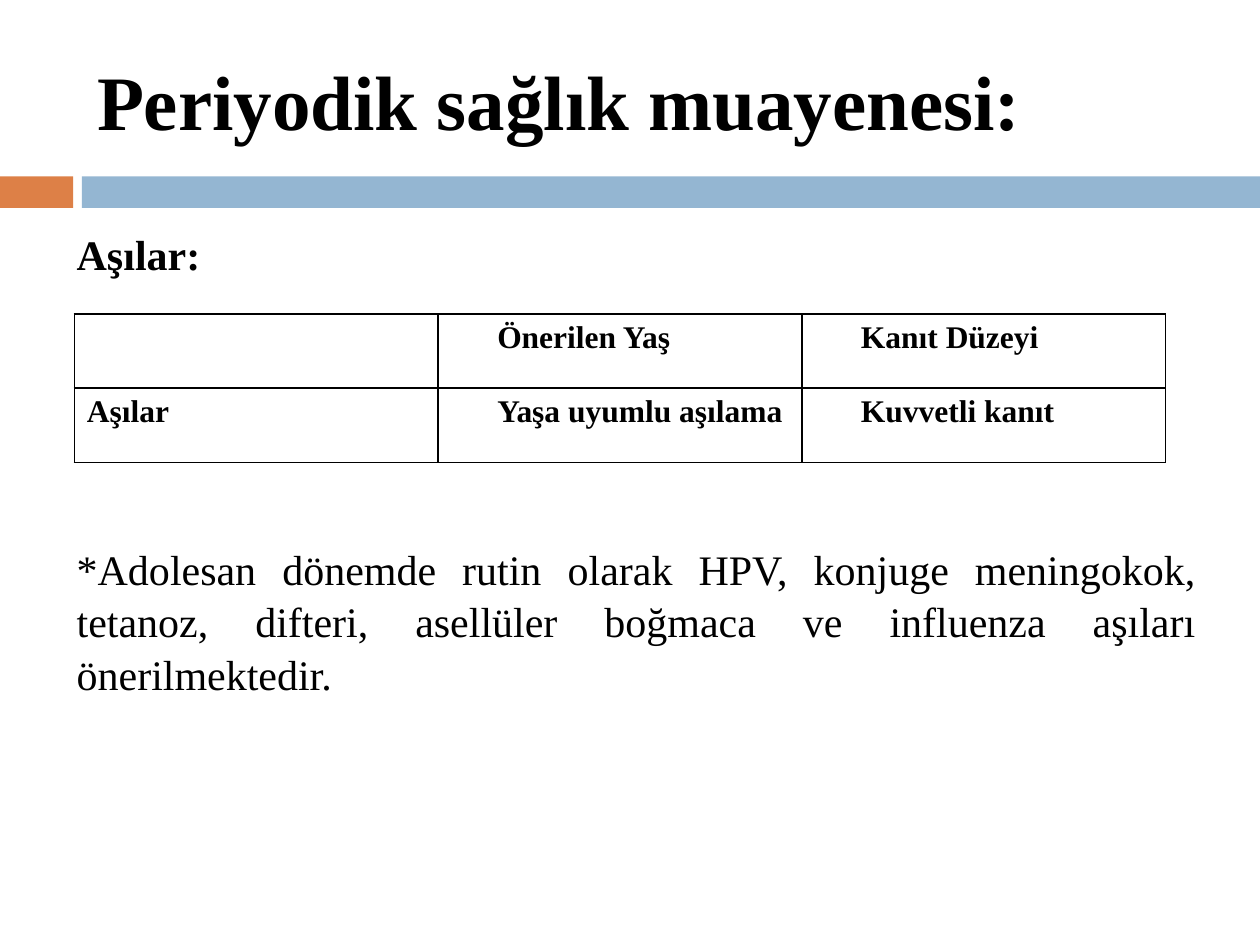
from lxml import etree
from pptx import Presentation
from pptx.dml.color import RGBColor
from pptx.enum.shapes import MSO_SHAPE
from pptx.enum.text import MSO_ANCHOR, PP_ALIGN
from pptx.oxml.ns import qn
from pptx.util import Inches, Pt


def color(hex_code):
    return RGBColor.from_string(hex_code)


def style(para, size, bold, align=PP_ALIGN.LEFT):
    para.alignment = align
    para.font.name = "Times New Roman"
    para.font.size = Pt(size)
    para.font.bold = bold
    para.font.color.rgb = color("000000")


deck = Presentation()
deck.slide_width, deck.slide_height = Inches(10), Inches(7.5)
page = deck.slides.add_slide(deck.slide_layouts[5])

# Divider bars
for left, width, fill in [(0, 0.58, "DD8047"), (0.65, 9.35, "94B6D2")]:
    bar = page.shapes.add_shape(MSO_SHAPE.RECTANGLE, Inches(left), Inches(1.4),
                                Inches(width), Inches(0.25))
    bar.shadow.inherit = False
    bar.fill.solid()
    bar.fill.fore_color.rgb = color(fill)
    bar.line.fill.background()

# Title
title = page.shapes.title
title.left, title.top = Inches(0.67), Inches(0.25)
title.width, title.height = Inches(8.92), Inches(1.08)
title.text_frame.text = "Periyodik sağlık muayenesi:"
title.text_frame.vertical_anchor = MSO_ANCHOR.MIDDLE
style(title.text_frame.paragraphs[0], 44, True)

# Body: heading and note, with room between them for the table
body = page.shapes.add_textbox(Inches(0.51), Inches(1.75), Inches(9.08), Inches(5.31))
frame = body.text_frame
frame.word_wrap = True
heading = frame.paragraphs[0]
heading.text = "Aşılar:"
style(heading, 24, True)
note = frame.add_paragraph()
note.text = ("*Adolesan dönemde rutin olarak HPV, konjuge meningokok, tetanoz, difteri, "
             "asellüler boğmaca ve influenza aşıları önerilmektedir.")
style(note, 24, False, PP_ALIGN.JUSTIFY)
note.space_before = Pt(150)
for para in frame.paragraphs:
    para.line_spacing = 1.04

# Vaccination table
rows = [["", "Önerilen Yaş", "Kanıt Düzeyi"],
        ["Aşılar", "Yaşa uyumlu aşılama", "Kuvvetli kanıt"]]
table = page.shapes.add_table(2, 3, Inches(0.59), Inches(2.49),
                              Inches(8.66), Inches(1.18)).table
for column in table.columns:
    column.width = Inches(8.66 / 3)
for row, texts in enumerate(rows):
    for col, text in enumerate(texts):
        cell = table.cell(row, col)
        cell.text = text
        cell.margin_left = Inches(0.47 if col else 0.1)
        style(cell.text_frame.paragraphs[0], 18, True)
        props = cell._tc.get_or_add_tcPr()
        for side in ("a:lnL", "a:lnR", "a:lnT", "a:lnB"):
            border = etree.SubElement(props, qn(side), w=str(Pt(1)))
            fill = etree.SubElement(border, qn("a:solidFill"))
            etree.SubElement(fill, qn("a:srgbClr"), val="000000")
        cell.fill.background()

deck.save("out.pptx")
